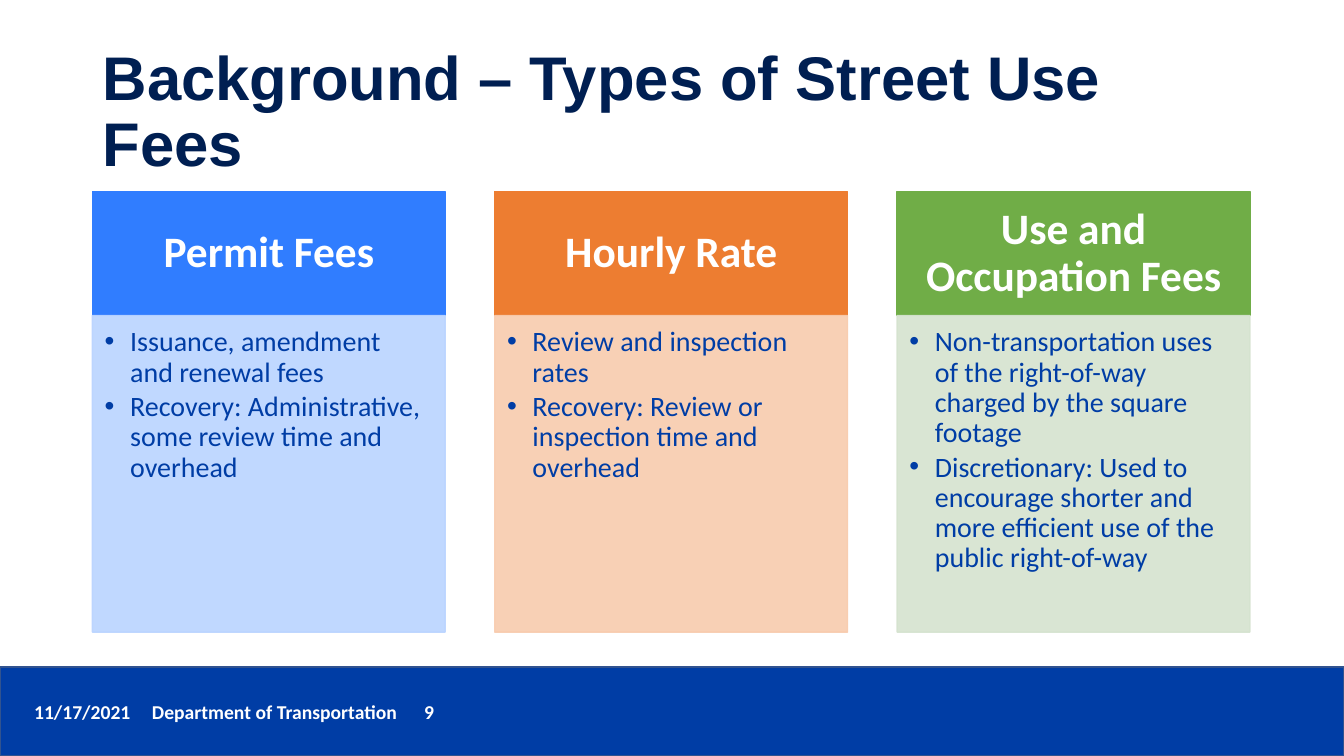
"""Build the slide on the three types of street use fees."""
from lxml import etree
from pptx import Presentation
from pptx import util as u
from pptx.dml import color
from pptx.enum import shapes, text
from pptx.oxml import ns

NAVY, BLUE, WHITE = "001F52", "003DA5", "FFFFFF"
CARD_LEFT, CARD_TOP, CARD_WIDTH, CARD_PITCH = 2.33, 4.83, 8.89, 10.14
HEADER_HEIGHT, BODY_HEIGHT = 3.12, 7.98
FEES = [
    ("Permit Fees", "307DFF", "BAD4FF", [
        "Issuance, amendment and renewal fees",
        "Recovery: Administrative, some review time and overhead"]),
    ("Hourly Rate", "ED7D31", "F8CBAD", [
        "Review and inspection rates",
        "Recovery: Review or inspection time and overhead"]),
    ("Use and Occupation Fees", "70AD47", "D5E3CF", [
        "Non-transportation uses of the right-of-way charged by the square footage",
        "Discretionary: Used to encourage shorter and more efficient use of the "
        "public right-of-way"]),
]


def paint(target, value):
    target.solid() if hasattr(target, "solid") else None
    target_color = target.fore_color if hasattr(target, "fore_color") else target.color
    target_color.rgb = color.RGBColor.from_string(value)


def add_box(left, top, width, height, fill, line):
    shape = slide.shapes.add_shape(
        shapes.MSO_SHAPE.RECTANGLE, u.Cm(left), u.Cm(top), u.Cm(width), u.Cm(height))
    shape.shadow.inherit = False
    paint(shape.fill, fill)
    paint(shape.line.fill, line)
    shape.line.width = u.Pt(1)
    shape.text_frame.word_wrap = True
    return shape


presentation = Presentation()
presentation.slide_width, presentation.slide_height = u.Cm(33.87), u.Cm(19.05)
slide = presentation.slides.add_slide(presentation.slide_layouts[5])

add_box(0, 16.81, 33.87, 2.24, BLUE, "31538F")
footer = slide.shapes.add_textbox(u.Cm(0.61), u.Cm(17.5), u.Cm(25.55), u.Cm(0.86))
footer.text_frame.word_wrap = True
paragraph = footer.text_frame.paragraphs[0]
paragraph.text = "11/17/2021\tDepartment of Transportation\t9"
tabs = etree.SubElement(paragraph._p.get_or_add_pPr(), ns.qn("a:tabLst"))
for position in (2.97, 9.83):
    etree.SubElement(tabs, ns.qn("a:tab"), pos=str(u.Cm(position)), algn="l")
paragraph.font.name, paragraph.font.size, paragraph.font.bold = "Calibri", u.Pt(14), True
paint(paragraph.font, WHITE)

title = slide.shapes.title
title.left, title.top, title.width, title.height = u.Cm(2.33), u.Cm(1.02), u.Cm(29.21), u.Cm(3.68)
title.text_frame.text = "Background – Types of Street Use Fees"
title.text_frame.word_wrap = True
title.text_frame.auto_size = text.MSO_AUTO_SIZE.NONE
title.text_frame.vertical_anchor = text.MSO_ANCHOR.MIDDLE
paragraph = title.text_frame.paragraphs[0]
paragraph.alignment, paragraph.line_spacing = text.PP_ALIGN.LEFT, 0.9
paragraph.font.name, paragraph.font.size, paragraph.font.bold = "Arial", u.Pt(44), True
paint(paragraph.font, NAVY)

for column, (heading, strong, pale, points) in enumerate(FEES):
    left = CARD_LEFT + column * CARD_PITCH
    header = add_box(left, CARD_TOP, CARD_WIDTH, HEADER_HEIGHT, strong, strong)
    frame = header.text_frame
    frame.margin_left = frame.margin_right = u.Cm(0.6)
    frame.margin_top = frame.margin_bottom = u.Cm(0.35)
    frame.vertical_anchor = text.MSO_ANCHOR.MIDDLE
    paragraph = frame.paragraphs[0]
    paragraph.text = heading
    paragraph.alignment, paragraph.line_spacing = text.PP_ALIGN.CENTER, 0.9
    paragraph.font.name, paragraph.font.size, paragraph.font.bold = "Calibri", u.Pt(31), True
    paint(paragraph.font, WHITE)

    body = add_box(left, CARD_TOP + HEADER_HEIGHT, CARD_WIDTH, BODY_HEIGHT, pale, pale)
    for pale_color in body._element.spPr.iter(ns.qn("a:srgbClr")):
        etree.SubElement(pale_color, ns.qn("a:alpha"), val="90000")
    frame = body.text_frame
    frame.margin_left = frame.margin_top = u.Cm(0.31)
    frame.margin_right, frame.margin_bottom = u.Cm(0.41), u.Cm(0.43)
    frame.vertical_anchor = text.MSO_ANCHOR.TOP
    frame.text = "\n".join(points)
    for paragraph in frame.paragraphs:
        paragraph.alignment, paragraph.line_spacing = text.PP_ALIGN.LEFT, 0.9
        paragraph.space_after = u.Pt(3)
        properties = paragraph._p.get_or_add_pPr()
        properties.set("marL", str(u.Cm(0.64)))
        properties.set("indent", str(u.Cm(-0.64)))
        etree.SubElement(properties, ns.qn("a:buFont"), typeface="Arial")
        etree.SubElement(properties, ns.qn("a:buChar"), char="•")
        paragraph.font.name, paragraph.font.size = "Calibri", u.Pt(20)
        paint(paragraph.font, BLUE)

presentation.save("out.pptx")
